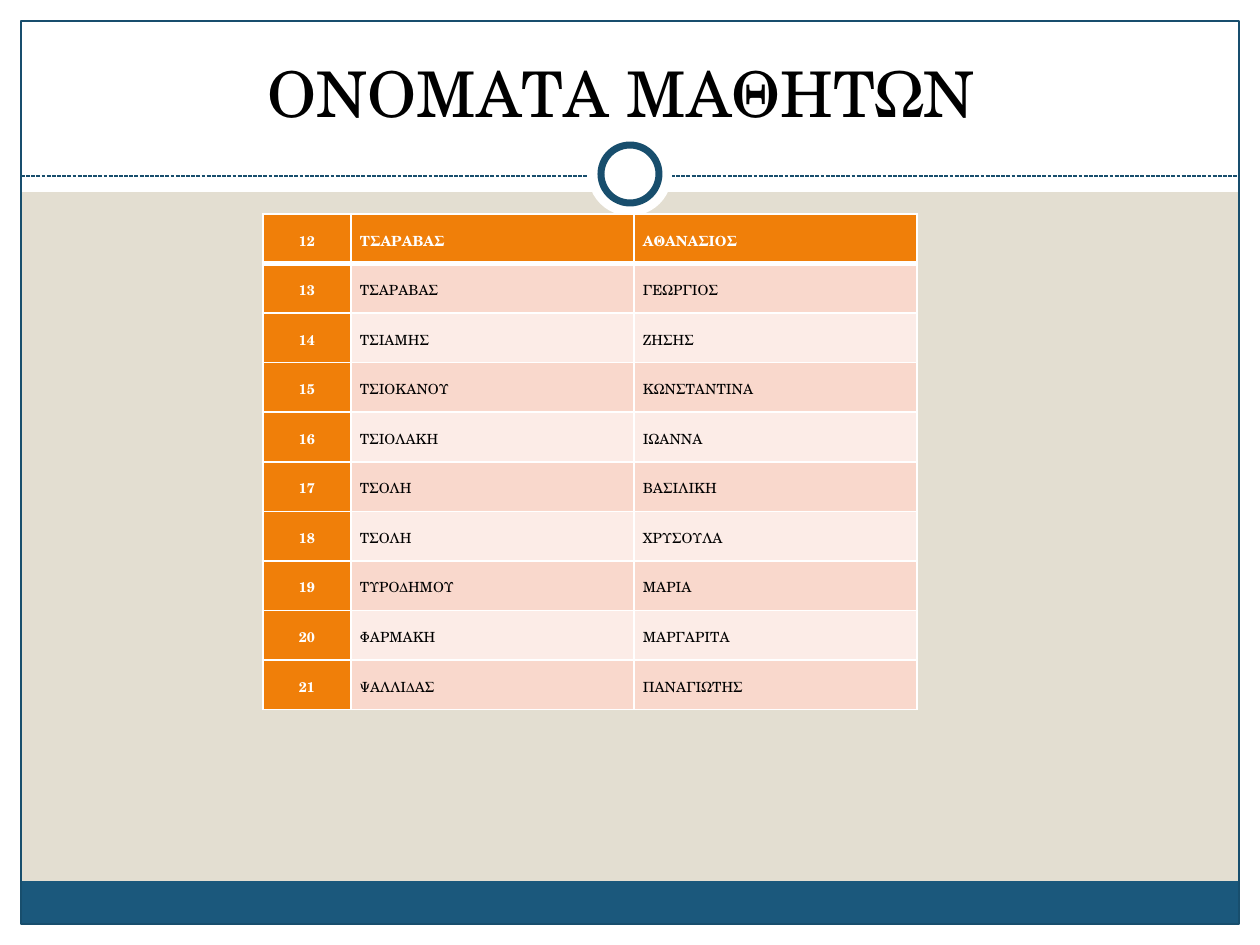
import pptx
import pptx.util
import pptx.dml.color
import pptx.enum.dml
import pptx.enum.shapes
import pptx.enum.text
import pptx.oxml.ns
import lxml.etree
from dataclasses import dataclass

SHAPE = pptx.enum.shapes.MSO_SHAPE
ALIGN = pptx.enum.text.PP_ALIGN
ANCHOR = pptx.enum.text.MSO_ANCHOR


@dataclass(frozen=True)
class Theme:
    font: str = "TeX Gyre Schola"
    background: str = "E3DED1"
    white: str = "FFFFFF"
    black: str = "000000"
    navy: str = "184E6D"
    footer: str = "1B587C"
    orange: str = "F07F09"
    bands: tuple = ("F9D8CC", "FCECE7")
    title_size: int = 36
    cell_size: int = 8


THEME = Theme()
WIDTH, HEIGHT, MARGIN = 1260, 945, 21

STUDENTS = [
    ("12", "ΤΣΑΡΑΒΑΣ", "ΑΘΑΝΑΣΙΟΣ"),
    ("13", "ΤΣΑΡΑΒΑΣ", "ΓΕΩΡΓΙΟΣ"),
    ("14", "ΤΣΙΑΜΗΣ", "ΖΗΣΗΣ"),
    ("15", "ΤΣΙΟΚΑΝΟΥ", "ΚΩΝΣΤΑΝΤΙΝΑ"),
    ("16", "ΤΣΙΟΛΑΚΗ", "ΙΩΑΝΝΑ"),
    ("17", "ΤΣΟΛΗ", "ΒΑΣΙΛΙΚΗ"),
    ("18", "ΤΣΟΛΗ", "ΧΡΥΣΟΥΛΑ"),
    ("19", "ΤΥΡΟΔΗΜΟΥ", "ΜΑΡΙΑ"),
    ("20", "ΦΑΡΜΑΚΗ", "ΜΑΡΓΑΡΙΤΑ"),
    ("21", "ΨΑΛΛΙΔΑΣ", "ΠΑΝΑΓΙΩΤΗΣ"),
]


def px(n):
    return pptx.util.Emu(round(n * 914400 / 126))


def rgb(color):
    return pptx.dml.color.RGBColor.from_string(color)


def write(tf, text, size, color, bold=False, align=ALIGN.LEFT, spacing=None):
    p = tf.paragraphs[0]
    p.alignment = align
    if spacing:
        p.line_spacing = spacing
    r = p.add_run()
    r.text = text
    r.font.name = THEME.font
    r.font.size = pptx.util.Pt(size)
    r.font.bold = bold
    r.font.color.rgb = rgb(color)


def set_border(cell, side, color, width):
    tag = pptx.oxml.ns.qn
    ln = lxml.etree.SubElement(cell._tc.get_or_add_tcPr(), tag(f"a:ln{side}"),
                               w=str(pptx.util.Pt(width)))
    fill = lxml.etree.SubElement(ln, tag("a:solidFill"))
    lxml.etree.SubElement(fill, tag("a:srgbClr"), val=color)


class SlideBuilder:
    def __init__(self, prs, theme):
        self.theme = theme
        self.s = prs.slides.add_slide(prs.slide_layouts[6])
        self.s.background.fill.solid()
        self.s.background.fill.fore_color.rgb = rgb(theme.background)

    def shape(self, kind, x, y, w, h, fill=None, line=None, width=0.75):
        sp = self.s.shapes.add_shape(kind, px(x), px(y), px(w), px(h))
        sp.shadow.inherit = False
        if fill:
            sp.fill.solid()
            sp.fill.fore_color.rgb = rgb(fill)
        else:
            sp.fill.background()
        if line:
            sp.line.color.rgb = rgb(line)
            sp.line.width = pptx.util.Pt(width)
        else:
            sp.line.fill.background()

    def dashed_line(self, x1, y1, x2, y2, color):
        line = self.s.shapes.add_connector(
            pptx.enum.shapes.MSO_CONNECTOR.STRAIGHT, px(x1), px(y1), px(x2), px(y2))
        line.line.color.rgb = rgb(color)
        line.line.width = pptx.util.Pt(0.75)
        line.line.dash_style = pptx.enum.dml.MSO_LINE.SQUARE_DOT
        lxml.etree.SubElement(line._element.spPr, pptx.oxml.ns.qn("a:effectLst"))

    def title(self, text, x, y, w, h):
        tf = self.s.shapes.add_textbox(px(x), px(y), px(w), px(h)).text_frame
        tf.word_wrap = True
        tf.vertical_anchor = ANCHOR.BOTTOM
        write(tf, text, self.theme.title_size, self.theme.black, align=ALIGN.CENTER)

    def table(self, rows, x, y, widths, h):
        tbl = self.s.shapes.add_table(len(rows), len(widths), px(x), px(y),
                                      px(sum(widths)), px(h)).table
        for col, width in zip(tbl.columns, widths):
            col.width = px(width)
        for i, row in enumerate(rows):
            for j, text in enumerate(row):
                self.cell(tbl.cell(i, j), text, i, j)

    def cell(self, cell, text, i, j):
        t = self.theme
        heading = i == 0 or j == 0
        cell.margin_left = cell.margin_right = px(9)
        cell.margin_top = cell.margin_bottom = 0
        cell.vertical_anchor = ANCHOR.MIDDLE
        # The rule under the first row is thicker than the others
        widths = {"L": 1, "R": 1, "T": 3 if i == 1 else 1, "B": 3 if i == 0 else 1}
        for side, width in widths.items():
            set_border(cell, side, t.white, width)
        cell.fill.solid()
        cell.fill.fore_color.rgb = rgb(t.orange if heading else t.bands[(i - 1) % 2])
        write(cell.text_frame, text, t.cell_size, t.white if heading else t.black,
              bold=heading, align=ALIGN.CENTER if j == 0 else ALIGN.LEFT, spacing=1.15)


def main():
    prs = pptx.Presentation()
    prs.slide_width, prs.slide_height = px(WIDTH), px(HEIGHT)
    b = SlideBuilder(prs, THEME)
    inner_w, inner_h = WIDTH - 2 * MARGIN, HEIGHT - 2 * MARGIN

    # White margins and header band
    for box in [(0, HEIGHT - MARGIN, WIDTH, MARGIN), (0, 0, WIDTH, 192),
                (0, 0, MARGIN, HEIGHT), (WIDTH - MARGIN, 0, MARGIN, HEIGHT)]:
        b.shape(SHAPE.RECTANGLE, *box, fill=THEME.white)

    # Footer bar and frame
    b.shape(SHAPE.RECTANGLE, MARGIN, 881, inner_w, 43, fill=THEME.footer)
    b.shape(SHAPE.RECTANGLE, MARGIN, MARGIN, inner_w, inner_h, line=THEME.navy)

    # Dashed divider with its ring
    b.dashed_line(MARGIN, 176, WIDTH - MARGIN, 176, THEME.navy)
    b.shape(SHAPE.OVAL, 588, 132, 84, 84, fill=THEME.white)
    b.shape(SHAPE.OVAL, 601, 145, 58, 58, fill=THEME.white, line=THEME.navy, width=4)

    # Title and student list
    b.title("ΟΝΟΜΑΤΑ ΜΑΘΗΤΩΝ ", 42, 32, 1176, 104)
    b.table(STUDENTS, 263, 214, (88, 283, 283), 496)

    prs.save("out.pptx")


if __name__ == "__main__":
    main()
